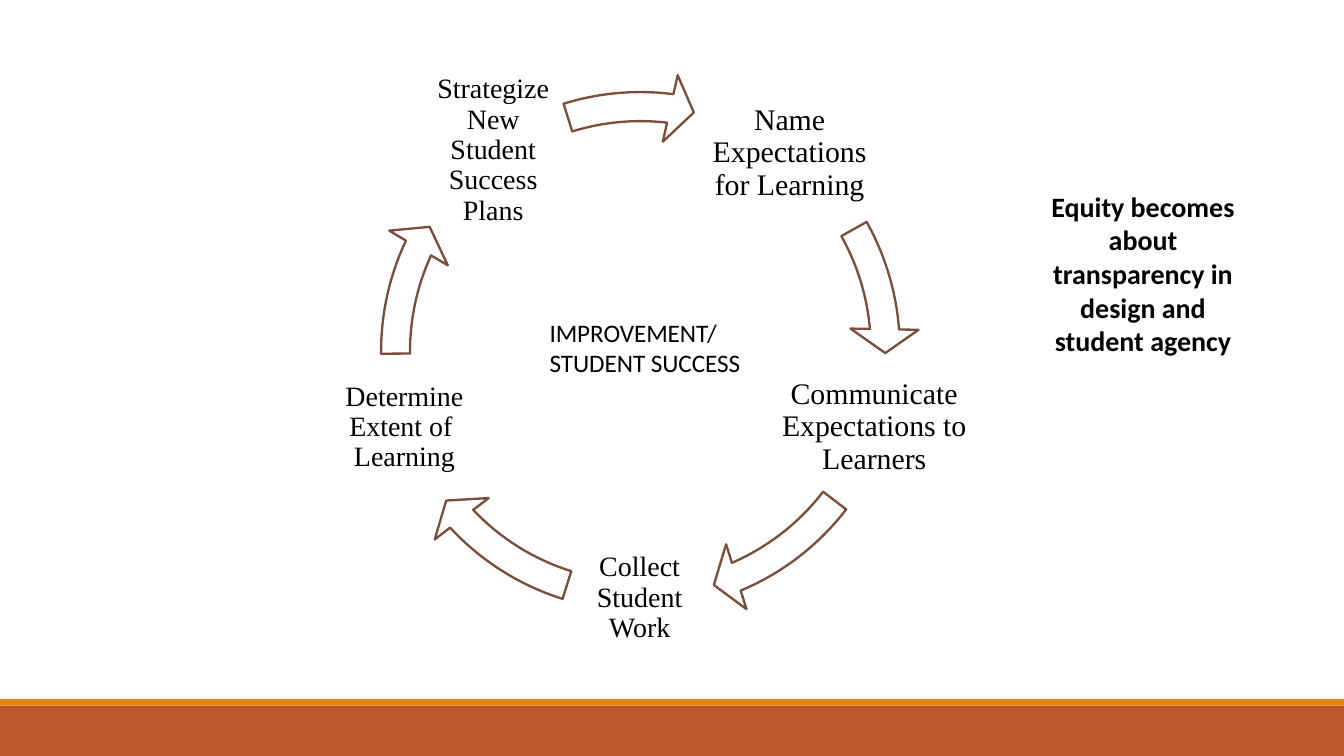
"""Build a slide showing the five-step cycle of improvement and student success."""
import pptx
import pptx.dml.color
import pptx.enum.shapes
import pptx.enum.text
import pptx.util

Inches = pptx.util.Inches
SHAPE = pptx.enum.shapes.MSO_SHAPE
ALIGN = pptx.enum.text.PP_ALIGN
ANCHOR = pptx.enum.text.MSO_ANCHOR


def color(hex_code):
    return pptx.dml.color.RGBColor.from_string(hex_code)


def add_text(box, words, size, font, align, bold=False):
    left, top, width, height = map(Inches, box)
    frame = slide.shapes.add_textbox(left, top, width, height).text_frame
    frame.word_wrap = True
    paragraph = frame.paragraphs[0]
    paragraph.alignment = align
    run = paragraph.add_run()
    run.text = words
    run.font.size = pptx.util.Pt(size)
    run.font.name = font
    run.font.bold = bold
    run.font.color.rgb = color("000000")
    return frame


presentation = pptx.Presentation()
presentation.slide_width = Inches(10)
presentation.slide_height = Inches(10) * 9 // 16
slide = presentation.slides.add_slide(presentation.slide_layouts[6])

for top, height, fill in [(5.25, 0.38, "BD582C"), (5.2, 0.05, "E48312")]:
    band = slide.shapes.add_shape(SHAPE.RECTANGLE, 0, Inches(top), Inches(10), Inches(height))
    band.shadow.inherit = False
    band.fill.solid()
    band.fill.fore_color.rgb = color(fill)
    band.line.fill.background()

ring_size = 4.15
units_per_degree = 0.6
steps = [
    ("Name Expectations for Learning", (5.17, 0.59, 1.41, 1.1), 16, 0.52, 330.72, 355.42),
    ("Communicate Expectations to Learners", (5.79, 2.63, 1.43, 1.1), 16, 0.54, 37.52, 66.95),
    ("Collect Student Work", (4.21, 3.9, 1.1, 1.1), 15, 0.54, 107.46, 136.89),
    ("Determine Extent of  Learning", (2.46, 2.63, 1.1, 1.1), 15, 0.54, 179.49, 205),
    ("Strategize New Student Success Plans", (3.12, 0.57, 1.1, 1.1), 15, 0.54, 252.77, 277),
]
for step, box, size, ring_top, start_angle, end_angle in steps:
    label = add_text(box, step, size, "Times New Roman", ALIGN.CENTER)
    label.vertical_anchor = ANCHOR.MIDDLE
    label.margin_left = label.margin_right = Inches(0.02)
    label.margin_top = label.margin_bottom = Inches(0.02)
    label.paragraphs[0].line_spacing = 0.9

    arrow = slide.shapes.add_shape(
        SHAPE.CIRCULAR_ARROW, Inches(2.69), Inches(ring_top), Inches(ring_size), Inches(ring_size))
    arrow.shadow.inherit = False
    arrow.fill.solid()
    arrow.fill.fore_color.rgb = color("FFFFFF")
    arrow.line.color.rgb = color("7A4E3A")
    arrow.line.width = pptx.util.Pt(1.25)
    arrow.adjustments[0] = 0.052
    arrow.adjustments[1] = 5.59 * units_per_degree
    arrow.adjustments[2] = end_angle * units_per_degree
    arrow.adjustments[3] = start_angle * units_per_degree
    arrow.adjustments[4] = 0.061

add_text((3.99, 2.31, 1.69, 0.56), "IMPROVEMENT/ STUDENT SUCCESS", 13.5, "Calibri", ALIGN.LEFT)
add_text((7.66, 1.36, 1.69, 1.36), "Equity becomes about transparency in design and student agency",
         15, "Calibri", ALIGN.CENTER, bold=True)

presentation.save("out.pptx")
